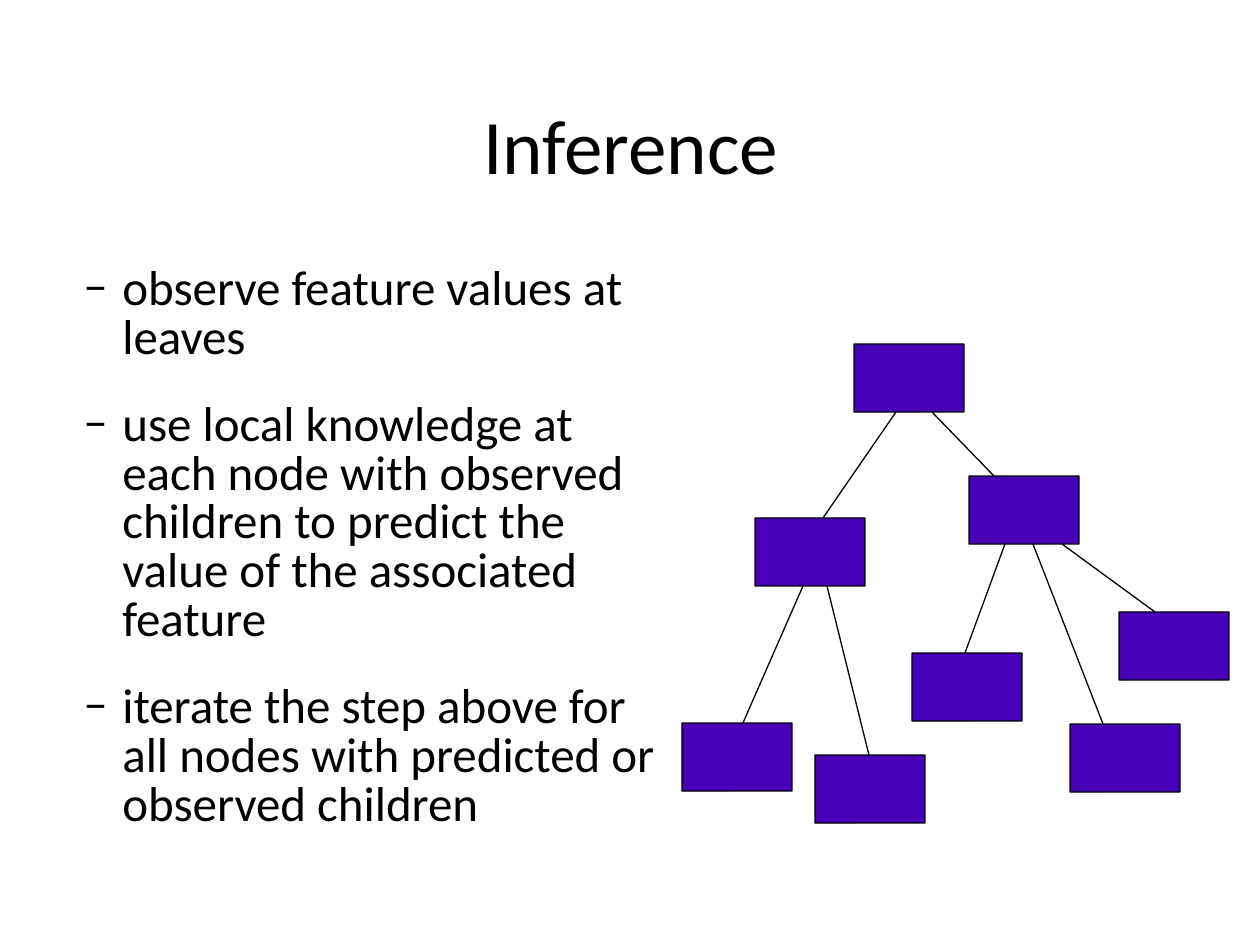
from lxml import etree
from pptx import Presentation
from pptx import util as u
from pptx.dml.color import RGBColor
from pptx.enum import shapes, text
from pptx.oxml import ns

BLACK = RGBColor(0x00, 0x00, 0x00)
VIOLET = RGBColor(0x47, 0x00, 0xB8)
PX = u.Inches(1) / 126
NODE_W, NODE_H = 110, 68

NODES = {
    "left leaf 1": (682, 723),
    "left leaf 2": (815, 755),
    "right leaf 1": (912, 653),
    "right leaf 2": (1070, 724),
    "right leaf 3": (1119, 612),
    "left": (755, 518),
    "right": (969, 476),
    "root": (854, 344),
}
EDGES = [
    ("left leaf 1", 743, "left", 803),
    ("left leaf 2", 869, "left", 827),
    ("right leaf 1", 965, "right", 1005),
    ("right leaf 2", 1103, "right", 1033),
    ("right leaf 3", 1155, "right", 1062),
    ("left", 823, "root", 896),
    ("right", 994, "root", 932),
]
STEPS = [
    "observe feature values at leaves",
    "use local knowledge at each node with observed children "
    "to predict the value of the associated feature",
    "iterate the step above for all nodes with predicted or observed children",
]


def px(length):
    return u.Emu(round(length * PX))


class Painter:
    font = "Calibri"
    line_width = u.Pt(0.75)

    def __init__(self, page):
        self.page = page

    def textbox(self, left, top, width, height, anchor):
        box = self.page.shapes.add_textbox(px(left), px(top), px(width), px(height))
        frame = box.text_frame
        frame.word_wrap = True
        frame.vertical_anchor = anchor
        return frame

    def add_span(self, para, words, size):
        span = para.add_run()
        span.text = words
        span.font.name = self.font
        span.font.size = u.Pt(size)
        span.font.color.rgb = BLACK

    def title(self, words, *place):
        para = self.textbox(*place, text.MSO_ANCHOR.MIDDLE).paragraphs[0]
        para.alignment = text.PP_ALIGN.CENTER
        para.line_spacing = 0.93
        self.add_span(para, words, 44)

    def bullets(self, items, *place):
        frame = self.textbox(*place, text.MSO_ANCHOR.TOP)
        for index, item in enumerate(items):
            para = frame.add_paragraph() if index else frame.paragraphs[0]
            para.level = 1
            para.line_spacing = 0.83
            para.space_before = u.Pt(5.6)
            para.space_after = u.Pt(16.3)
            self.add_span(para, item, 28)
            props = para._p.get_or_add_pPr()
            props.set("marL", str(px(102)))
            props.set("indent", str(px(-39)))
            etree.SubElement(props, ns.qn("a:buFont")).set("typeface", self.font)
            etree.SubElement(props, ns.qn("a:buChar")).set("char", "–")

    def node(self, left, top):
        box = self.page.shapes.add_shape(
            shapes.MSO_SHAPE.ROUNDED_RECTANGLE, px(left), px(top), px(NODE_W), px(NODE_H))
        box.adjustments[0] = 0.003
        box.shadow.inherit = False
        box.fill.solid()
        box.fill.fore_color.rgb = VIOLET
        box.line.color.rgb = BLACK
        box.line.width = self.line_width

    def line(self, x1, y1, x2, y2):
        link = self.page.shapes.add_connector(
            shapes.MSO_CONNECTOR.STRAIGHT, px(x1), px(y1), px(x2), px(y2))
        link.line.color.rgb = BLACK
        link.line.width = self.line_width
        etree.SubElement(link._element.spPr, ns.qn("a:effectLst"))


def main():
    deck = Presentation()
    deck.slide_width, deck.slide_height = px(1260), px(945)
    painter = Painter(deck.slides.add_slide(deck.slide_layouts[6]))
    painter.title("Inference", 93, 69, 1076, 159)
    painter.bullets(STEPS, 8, 260, 680, 595)
    for left, top in NODES.values():
        painter.node(left, top)
    for child, child_x, parent, parent_x in EDGES:
        painter.line(child_x, NODES[child][1], parent_x, NODES[parent][1] + NODE_H)
    deck.save("out.pptx")


if __name__ == "__main__":
    main()
